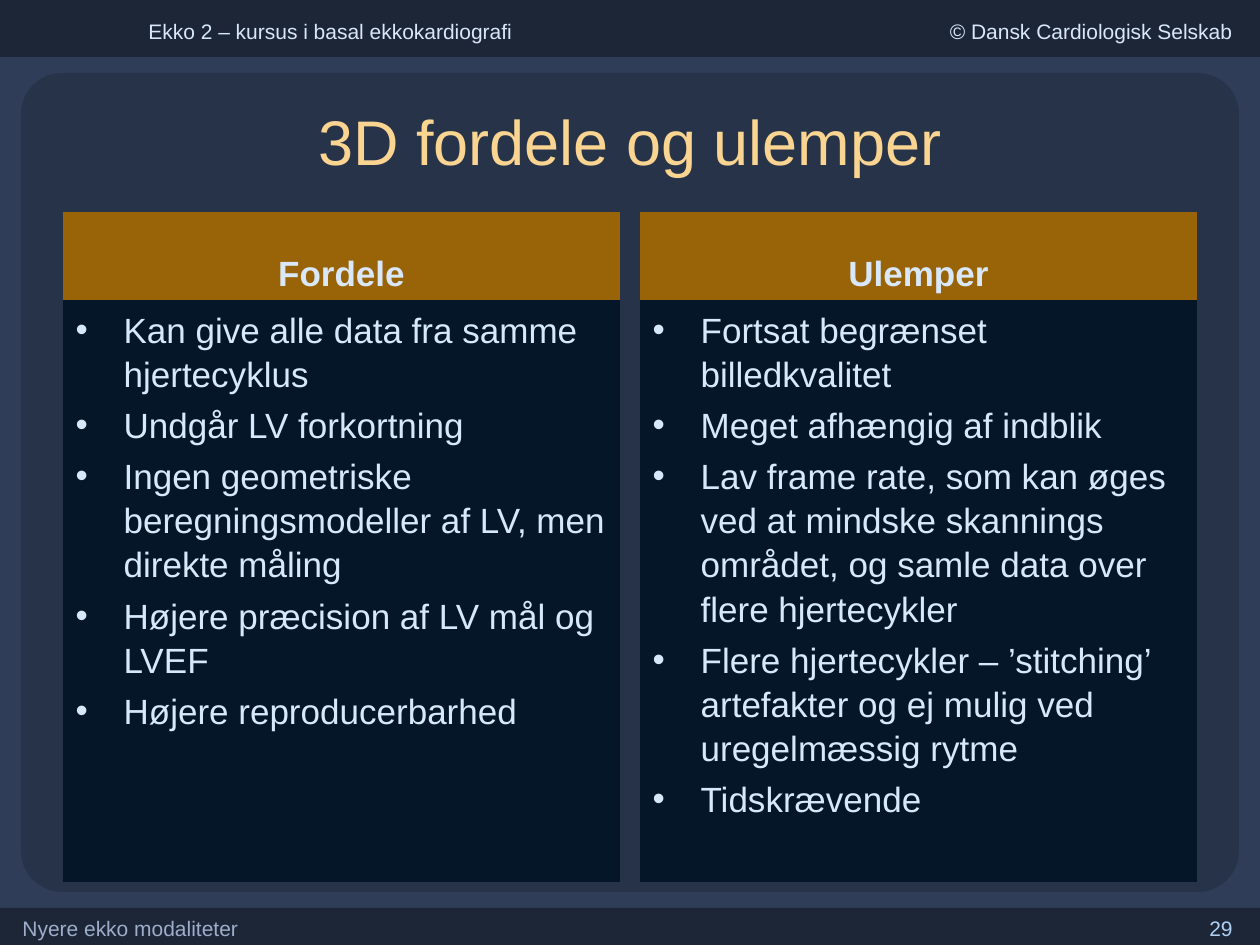
from dataclasses import dataclass

from lxml.etree import SubElement
from pptx import Presentation
from pptx.dml.color import RGBColor
from pptx.enum.shapes import MSO_SHAPE
from pptx.enum.text import MSO_ANCHOR, MSO_AUTO_SIZE, PP_ALIGN
from pptx.oxml.ns import qn
from pptx.util import Emu, Pt

PX_PER_INCH = 126


@dataclass(frozen=True)
class Theme:
    """Colours, font and type sizes of the slide."""
    font: str = "Arial"
    background: str = "2F3D58"
    bar: str = "1D2637"
    panel: str = "273349"
    heading_fill: str = "996307"
    list_fill: str = "051629"
    title: str = "FAD491"
    text: str = "D8E8FA"
    footer: str = "9DADCB"
    number: str = "AFD0F5"
    title_size: int = 36
    body_size: int = 20
    small_size: int = 12


THEME = Theme()

COLUMNS = [
    ("Fordele", [
        "Kan give alle data fra samme hjertecyklus",
        "Undgår LV forkortning",
        "Ingen geometriske beregningsmodeller af LV, men direkte måling",
        "Højere præcision af LV mål og LVEF",
        "Højere reproducerbarhed",
    ]),
    ("Ulemper", [
        "Fortsat begrænset billedkvalitet",
        "Meget afhængig af indblik",
        "Lav frame rate, som kan øges ved at mindske skannings området, "
        "og samle data over flere hjertecykler",
        "Flere hjertecykler – ’stitching’ artefakter og ej mulig ved "
        "uregelmæssig rytme",
        "Tidskrævende",
    ]),
]


def px(length):
    """Turn whole pixels into EMU."""
    return Emu(round(length * 914400 / PX_PER_INCH))


def paint(target, colour):
    """Fill a shape or background with a solid colour."""
    target.fill.solid()
    target.fill.fore_color.rgb = RGBColor.from_string(colour)


def place(box, left, top, width, height):
    """Move and size a box given in pixels."""
    box.left, box.top, box.width, box.height = map(px, (left, top, width, height))


def add_bullet(paragraph, indent=48):
    """Give a paragraph a round bullet with a hanging indent."""
    properties = paragraph._p.get_or_add_pPr()
    properties.set("marL", str(px(indent)))
    properties.set("indent", str(-px(indent)))
    SubElement(properties, qn("a:buFont"), typeface=THEME.font)
    SubElement(properties, qn("a:buChar"), char="•")


def write(box, *texts, size=THEME.small_size, colour=THEME.text, bold=False,
          align=PP_ALIGN.LEFT, anchor=MSO_ANCHOR.TOP, bullets=False, spacing=1.0):
    """Write one formatted paragraph per text into a box."""
    frame = box.text_frame
    frame.word_wrap = True
    frame.auto_size = MSO_AUTO_SIZE.NONE
    frame.vertical_anchor = anchor
    for index, text in enumerate(texts):
        paragraph = frame.add_paragraph() if index else frame.paragraphs[0]
        if bullets:
            add_bullet(paragraph)
        paragraph.alignment = align
        paragraph.line_spacing = spacing
        paragraph.space_before = Pt(size * 0.2 if index else 0)
        span = paragraph.add_run()
        span.text = text
        span.font.name = THEME.font
        span.font.size = Pt(size)
        span.font.bold = bold
        span.font.color.rgb = RGBColor.from_string(colour)


def add_backdrop(page, order, kind, colour, *bounds):
    """Add a plain shape behind the placeholders."""
    shape = page.shapes.add_shape(kind, *map(px, bounds))
    paint(shape, colour)
    shape.line.fill.background()
    shape.shadow.inherit = False
    page.shapes.element.insert(2 + order, shape._element)
    return shape


def add_label(page, text, *bounds, **style):
    """Add a small line of text."""
    write(page.shapes.add_textbox(*map(px, bounds)), text, **style)


def fill_column(heading_box, list_box, left, heading, items):
    """Lay out a heading and its bullet list."""
    width = 557
    place(heading_box, left, 212, width, 88)
    paint(heading_box, THEME.heading_fill)
    write(heading_box, heading, size=THEME.body_size, bold=True,
          align=PP_ALIGN.CENTER, anchor=MSO_ANCHOR.BOTTOM)
    place(list_box, left, 300, width, 582)
    paint(list_box, THEME.list_fill)
    write(list_box, *items, size=THEME.body_size, bullets=True, spacing=1.05)


def main():
    """Build and save the slide."""
    deck = Presentation()
    deck.slide_width, deck.slide_height = px(1260), px(945)
    page = deck.slides.add_slide(deck.slide_layouts.get_by_name("Comparison"))
    paint(page.background, THEME.background)

    add_backdrop(page, 0, MSO_SHAPE.RECTANGLE, THEME.bar, 0, 908, 1260, 37)
    add_backdrop(page, 1, MSO_SHAPE.RECTANGLE, THEME.bar, 0, 0, 1260, 57)
    panel = add_backdrop(page, 2, MSO_SHAPE.ROUNDED_RECTANGLE, THEME.panel,
                         21, 73, 1218, 819)
    panel.adjustments[0] = 0.05

    title, *boxes = page.placeholders
    place(title, 63, 85, 1134, 111)
    write(title, "3D fordele og ulemper", size=THEME.title_size,
          colour=THEME.title, align=PP_ALIGN.CENTER, anchor=MSO_ANCHOR.MIDDLE)
    for index, (heading, items) in enumerate(COLUMNS):
        heading_box, list_box = boxes[2 * index:2 * index + 2]
        fill_column(heading_box, list_box, 63 + 577 * index, heading, items)

    add_label(page, "Ekko 2 – kursus i basal ekkokardiografi", 136, 12, 473, 38)
    add_label(page, "© Dansk Cardiologisk Selskab", 868, 12, 377, 38,
              align=PP_ALIGN.RIGHT)
    add_label(page, "Nyere ekko modaliteter", 10, 909, 400, 32,
              colour=THEME.footer)
    add_label(page, "29", 951, 909, 294, 32, colour=THEME.number,
              align=PP_ALIGN.RIGHT)
    deck.save("out.pptx")


if __name__ == "__main__":
    main()
